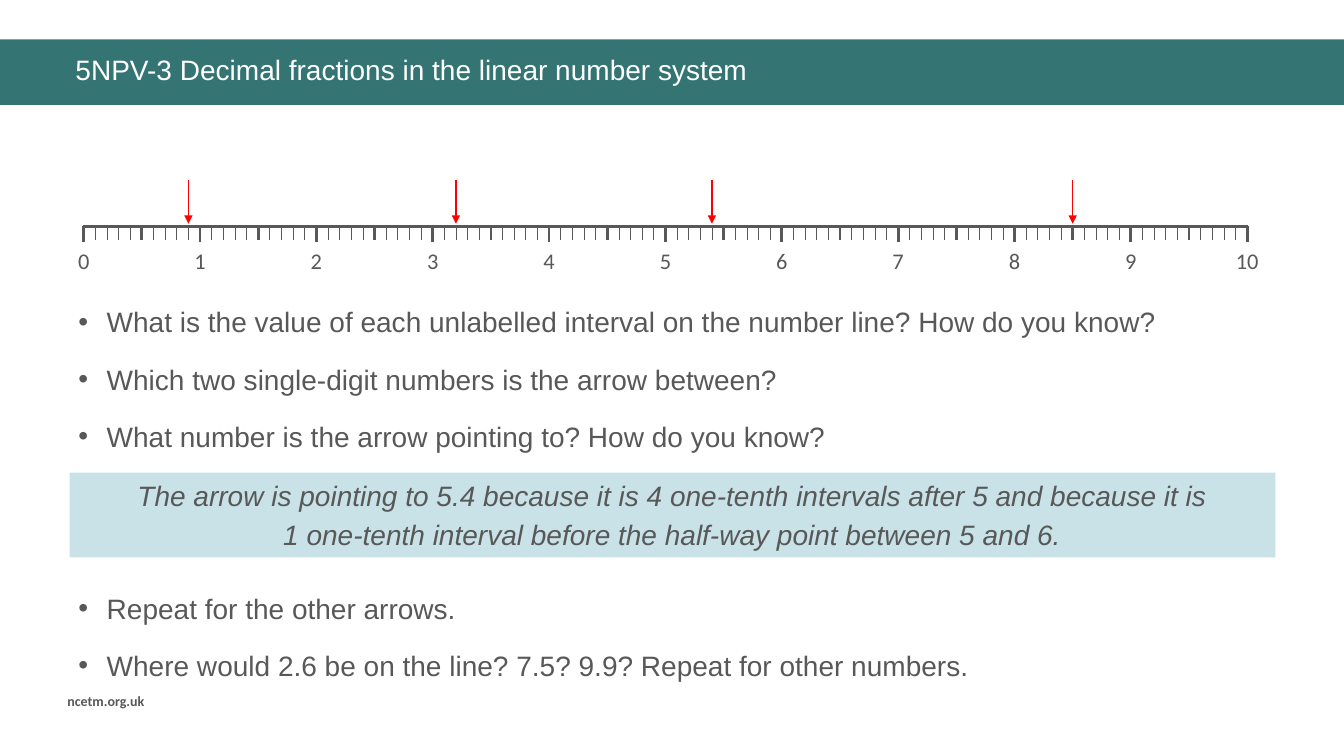
import pptx
import pptx.dml.color
import pptx.enum.shapes
import pptx.enum.text
import pptx.oxml
import pptx.oxml.ns
import pptx.util
from pptx.util import Inches

TEAL, PALE, GREY, RED, WHITE = "347574", "C8E2E8", "585858", "FF0000", "FFFFFF"
ALIGN = pptx.enum.text.PP_ALIGN
ANCHOR = pptx.enum.text.MSO_ANCHOR


def color(value):
    return pptx.dml.color.RGBColor.from_string(value)


def xml_element(tag, **attributes):
    element = pptx.oxml.parse_xml(f"<{tag} {pptx.oxml.ns.nsdecls('a')}/>")
    for name, value in attributes.items():
        element.set(name, value)
    return element


def add_bullet(para, indent):
    properties = para._p.get_or_add_pPr()
    properties.set("marL", str(Inches(indent)))
    properties.set("indent", str(-Inches(indent)))
    properties.append(xml_element("a:buFont", typeface="Arial"))
    properties.append(xml_element("a:buChar", char="•"))


def write_text(shape, lines, size=20, font="Arial", fill=GREY, bold=False, italic=False,
               align=ALIGN.LEFT, anchor=ANCHOR.TOP, spacing=1.0, before=0, after=0, bullet=False):
    frame = shape.text_frame
    frame.word_wrap = True
    frame.vertical_anchor = anchor
    for number, line in enumerate(lines):
        para = frame.add_paragraph() if number else frame.paragraphs[0]
        para.alignment = align
        para.line_spacing = spacing
        para.space_before = pptx.util.Pt(before if number else 0)
        para.space_after = pptx.util.Pt(after)
        if bullet:
            add_bullet(para, 0.28)
        span = para.add_run()
        span.text = line
        span.font.name = font
        span.font.size = pptx.util.Pt(size)
        span.font.bold = bold
        span.font.italic = italic
        span.font.color.rgb = color(fill)


def add_text(page, box, lines, **text_format):
    shape = page.shapes.add_textbox(*map(Inches, box))
    write_text(shape, lines, **text_format)


def add_block(page, box, fill):
    shape = page.shapes.add_shape(pptx.enum.shapes.MSO_SHAPE.RECTANGLE, *map(Inches, box))
    shape.shadow.inherit = False
    shape.fill.solid()
    shape.fill.fore_color.rgb = color(fill)
    shape.line.fill.background()
    return shape


def add_line(page, start, end, fill, width, arrow=False):
    line = page.shapes.add_connector(
        pptx.enum.shapes.MSO_CONNECTOR.STRAIGHT, *map(Inches, start + end))
    line.line.color.rgb = color(fill)
    line.line.width = pptx.util.Pt(width)
    if arrow:
        line.line._get_or_add_ln().append(xml_element("a:tailEnd", type="triangle"))
    line._element.spPr.append(xml_element("a:effectLst"))


def add_header(page, box, title):
    left, top, width, height = box
    add_block(page, box, TEAL)
    add_text(page, (left + 0.65, top + 0.12, width - 1.01, 0.47), [title],
             fill=WHITE, spacing=0.9)


def add_number_line(page, box, last, arrows):
    left, top, width, height = box
    unit = width / last
    axis = top + 0.46
    add_line(page, (left - 0.01, axis), (left + width + 0.01, axis), GREY, 2.25)
    for tenth in range(last * 10 + 1):
        x = left + tenth * unit / 10
        length = 0.14 if tenth % 10 else 0.16
        thickness = 0.5 if tenth % 5 else 2
        add_line(page, (x, axis - 0.01), (x, axis - 0.01 + length), GREY, thickness)
    for number in range(last + 1):
        add_text(page, (left + number * unit - 0.6, top + height - 0.37, 1.2, 0.37),
                 [str(number)], size=16, font="Calibri", align=ALIGN.CENTER)
    for value in arrows:
        x = left + value * unit
        add_line(page, (x, top), (x, axis - 0.03), RED, 1, arrow=True)


def add_questions(page, box, lines):
    add_text(page, box, lines, spacing=1.2, before=6, after=6, bullet=True)


def add_answer(page, box, lines):
    write_text(add_block(page, box, PALE), lines, italic=True, align=ALIGN.CENTER,
               anchor=ANCHOR.MIDDLE, before=4)


def build_slide(page):
    add_header(page, (0, 0.39, 13.33, 0.65), "5NPV-3 Decimal fractions in the linear number system")
    add_number_line(page, (0.83, 1.79, 11.54, 0.98), 10, (0.9, 3.2, 5.4, 8.5))
    add_questions(page, (0.68, 2.91, 11.98, 1.75), [
        "What is the value of each unlabelled interval on the number line? How do you know?",
        "Which two single-digit numbers is the arrow between?",
        "What number is the arrow pointing to? How do you know?",
    ])
    add_answer(page, (0.69, 4.69, 11.96, 0.84), [
        "The arrow is pointing to 5.4 because it is 4 one-tenth intervals after 5 and because it is",
        "1 one-tenth interval before the half-way point between 5 and 6.",
    ])
    add_questions(page, (0.68, 5.75, 11.98, 1.1), [
        "Repeat for the other arrows.",
        "Where would 2.6 be on the line? 7.5? 9.9? Repeat for other numbers.",
    ])
    add_text(page, (0.57, 6.82, 1.21, 0.27), ["ncetm.org.uk"], size=10, font="Calibri", bold=True)


def main():
    deck = pptx.Presentation()
    deck.slide_width = Inches(13.33)
    deck.slide_height = Inches(7.5)
    build_slide(deck.slides.add_slide(deck.slide_layouts[6]))
    deck.save("out.pptx")


if __name__ == "__main__":
    main()
